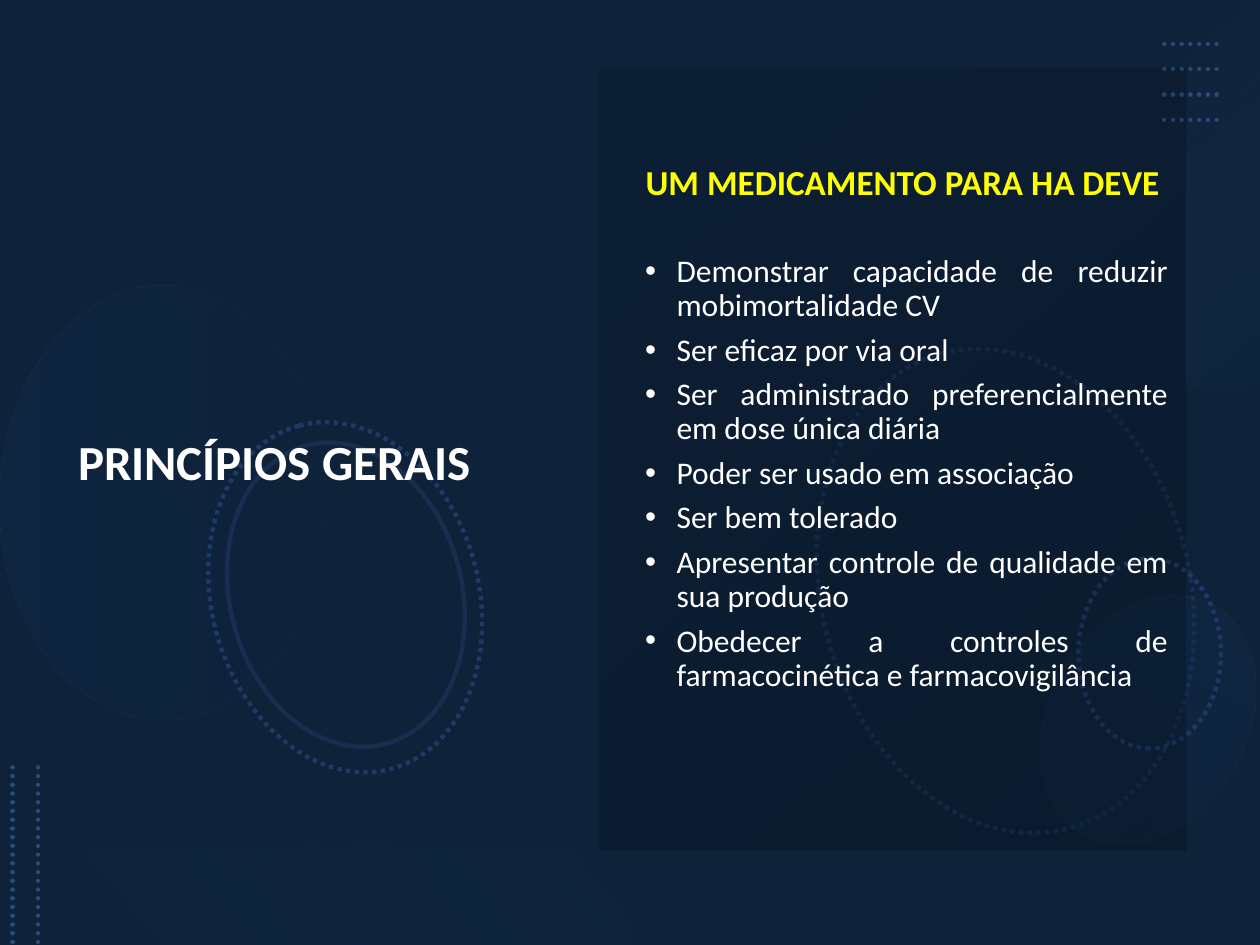
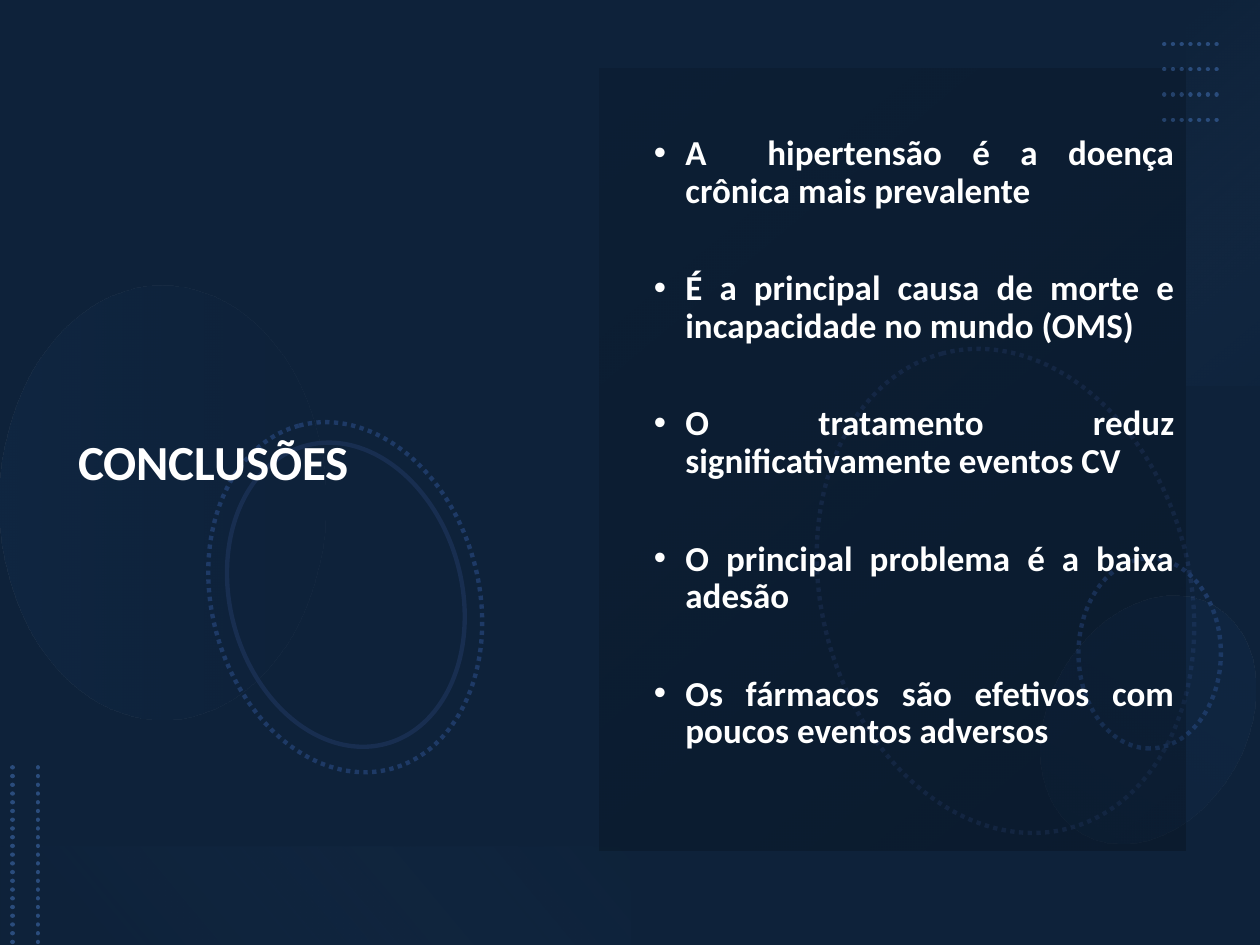
from dataclasses import dataclass

from lxml.etree import SubElement
from pptx import Presentation
from pptx.dml.color import RGBColor
from pptx.enum.dml import MSO_LINE
from pptx.enum.shapes import MSO_CONNECTOR, MSO_SHAPE
from pptx.enum.text import MSO_ANCHOR, MSO_AUTO_SIZE, PP_ALIGN
from pptx.oxml.ns import qn
from pptx.util import Pt

EMU_PER_PX = 9144
SLIDE_WIDTH, SLIDE_HEIGHT = 1000, 750


def px(length):
    return length * EMU_PER_PX


@dataclass(frozen=True)
class Theme:
    font: str = "Calibri"
    base: str = "1F497D"
    black: str = "000000"
    white: str = "FFFFFF"
    yellow: str = "FFFF00"
    navy: str = "0F243E"
    blue: str = "17375E"
    sky: str = "558ED5"
    pale: str = "8EB4E3"
    dots: str = "2A4C7C"
    ring: str = "1E3A66"
    faint_ring: str = "182E50"
    title_size: int = 28
    heading_size: int = 20
    list_size: int = 18
    line_width: float = 2.5
    line_spacing: float = 0.9
    paragraph_gap: int = 6


class Deck:
    def __init__(self, theme):
        self.theme = theme
        self.presentation = Presentation()
        self.presentation.slide_width = px(SLIDE_WIDTH)
        self.presentation.slide_height = px(SLIDE_HEIGHT)
        self.slide = None

    def start_slide(self):
        layout = self.presentation.slide_layouts[1]
        self.slide = self.presentation.slides.add_slide(layout)

    def shape(self, kind, box, rotation=0):
        shape = self.slide.shapes.add_shape(kind, *map(px, box))
        shape.rotation = rotation
        shape.shadow.inherit = False
        shape.fill.background()
        shape.line.fill.background()
        return shape

    def solid(self, box, color, opacity=100):
        shape = self.shape(MSO_SHAPE.RECTANGLE, box)
        shape.fill.solid()
        shape.fill.fore_color.rgb = RGBColor.from_string(color)
        color_element = shape.element.spPr.find(".//" + qn("a:srgbClr"))
        SubElement(color_element, qn("a:alpha"), val=str(opacity * 1000))

    def gradient(self, kind, box, rotation, angle, stops):
        shape = self.shape(kind, box, rotation)
        properties = shape.element.spPr
        empty_fill = properties.find(qn("a:noFill"))
        gradient = SubElement(properties, qn("a:gradFill"), rotWithShape="1")
        properties.replace(empty_fill, gradient)
        stop_list = SubElement(gradient, qn("a:gsLst"))
        for position, color, opacity in stops:
            stop = SubElement(stop_list, qn("a:gs"), pos=str(position * 1000))
            color_element = SubElement(stop, qn("a:srgbClr"), val=color)
            SubElement(color_element, qn("a:alpha"), val=str(opacity * 1000))
        SubElement(gradient, qn("a:lin"), ang=str(angle * 60000), scaled="0")

    def outline(self, line, color, dotted):
        line.color.rgb = RGBColor.from_string(color)
        line.width = Pt(self.theme.line_width)
        if dotted:
            line.dash_style = MSO_LINE.ROUND_DOT

    def ring(self, box, rotation, color, dotted=True):
        shape = self.shape(MSO_SHAPE.OVAL, box, rotation)
        self.outline(shape.line, color, dotted)

    def dotted_line(self, *ends):
        connector = self.slide.shapes.add_connector(MSO_CONNECTOR.STRAIGHT, *map(px, ends))
        self.outline(connector.line, self.theme.dots, True)
        properties = connector.element.spPr
        properties.find(qn("a:ln")).set("cap", "rnd")
        SubElement(properties, qn("a:effectLst"))

    def backdrop(self):
        theme = self.theme
        full = (0, 0, SLIDE_WIDTH, SLIDE_HEIGHT)
        self.solid(full, theme.base)
        self.solid(full, theme.black, 53)
        self.gradient(MSO_SHAPE.RECTANGLE, (0, 672, 500, 78), 180, 140,
                      [(10, theme.navy, 10), (100, theme.sky, 0)])
        self.ring((603, 323, 390, 292), 75, theme.faint_ring)
        self.ring((837, 462, 151, 113), 270, theme.ring)
        self.gradient(MSO_SHAPE.OVAL, (-43, 270, 344, 258), 270, 90,
                      [(0, theme.blue, 20), (100, theme.navy, 10)])
        self.gradient(MSO_SHAPE.OVAL, (833, 467, 156, 208), 210, 90,
                      [(0, theme.blue, 10), (100, theme.blue, 20)])
        self.ring((133, 368, 282, 212), 75, theme.ring)
        self.ring((152, 380, 245, 184), 75, theme.faint_ring, dotted=False)
        self.gradient(MSO_SHAPE.RECTANGLE, (818, 124, 306, 58), 270, 140,
                      [(0, theme.pale, 0), (100, theme.blue, 10)])
        for row in range(4):
            self.dotted_line(924, 35 + 20 * row, 969, 35 + 20 * row)
        for left in (10, 30):
            self.dotted_line(left, 609, left, SLIDE_HEIGHT)

    def panel(self):
        black = self.theme.black
        self.gradient(MSO_SHAPE.RECTANGLE, (398, 132, 621, 465), 90, 140,
                      [(0, black, 20), (100, black, 10)])

    def placeholder(self, index, box):
        shape = self.slide.placeholders[index]
        shape.left, shape.top, shape.width, shape.height = map(px, box)
        self.slide.shapes.element.append(shape.element)
        frame = shape.text_frame
        frame.word_wrap = True
        frame.auto_size = MSO_AUTO_SIZE.NONE
        frame.vertical_anchor = MSO_ANCHOR.MIDDLE
        return frame

    def style(self, paragraph, size, color, bold, alignment, gap=None):
        paragraph.alignment = alignment
        paragraph.line_spacing = self.theme.line_spacing
        paragraph.space_before = Pt(0)
        paragraph.space_after = Pt(self.theme.paragraph_gap if gap is None else gap)
        paragraph.font.name = self.theme.font
        paragraph.font.size = Pt(size)
        paragraph.font.bold = bold
        paragraph.font.color.rgb = RGBColor.from_string(color)

    def bullet(self, paragraph, margin):
        properties = paragraph._p.get_or_add_pPr()
        properties.set("marL", str(px(margin)))
        properties.set("indent", str(px(-25 if margin else 0)))
        if margin:
            SubElement(properties, qn("a:buFont"), typeface="Arial")
            SubElement(properties, qn("a:buChar"), char="•")
        else:
            SubElement(properties, qn("a:buNone"))

    def title(self, text):
        frame = self.placeholder(0, (52, 69, 409, 599))
        frame.text = text
        self.style(frame.paragraphs[0], self.theme.title_size, self.theme.white, True, PP_ALIGN.LEFT)

    def body(self, box, items, size, bold, margin, gap=None, heading=None):
        frame = self.placeholder(1, box)
        frame.text = "\n".join([heading, *items] if heading else items)
        paragraphs = list(frame.paragraphs)
        if heading:
            first = paragraphs.pop(0)
            self.bullet(first, 0)
            self.style(first, self.theme.heading_size, self.theme.yellow, True, PP_ALIGN.CENTER, 30)
        for paragraph in paragraphs:
            self.bullet(paragraph, margin)
            self.style(paragraph, size, self.theme.white, bold, PP_ALIGN.JUSTIFY, gap)
        paragraphs[-1].space_after = Pt(self.theme.paragraph_gap)

    def content_slide(self, title, **body):
        self.start_slide()
        self.backdrop()
        self.title(title)
        self.panel()
        self.body(**body)


def main():
    theme = Theme()
    deck = Deck(theme)
    deck.content_slide(
        "PRINCÍPIOS GERAIS",
        box=(496, 13, 441, 655),
        heading="UM MEDICAMENTO PARA HA DEVE",
        items=[
            "Demonstrar capacidade de reduzir mobimortalidade CV",
            "Ser eficaz por via oral",
            "Ser administrado preferencialmente em dose única diária",
            "Poder ser usado em associação",
            "Ser bem tolerado",
            "Apresentar controle de qualidade em sua produção",
            "Obedecer a controles de farmacocinética e farmacovigilância",
        ],
        size=theme.list_size,
        bold=False,
        margin=31,
    )
    deck.content_slide(
        "CONCLUSÕES",
        box=(496, 69, 446, 566),
        items=[
            "A  hipertensão é a doença crônica mais prevalente",
            "É a principal causa de morte e incapacidade no mundo (OMS)",
            "O tratamento reduz significativamente eventos CV",
            "O principal problema é a baixa adesão",
            "Os fármacos são efetivos com poucos eventos adversos",
        ],
        size=theme.heading_size,
        bold=True,
        margin=38,
        gap=34,
    )
    deck.presentation.save("out.pptx")


if __name__ == "__main__":
    main()
